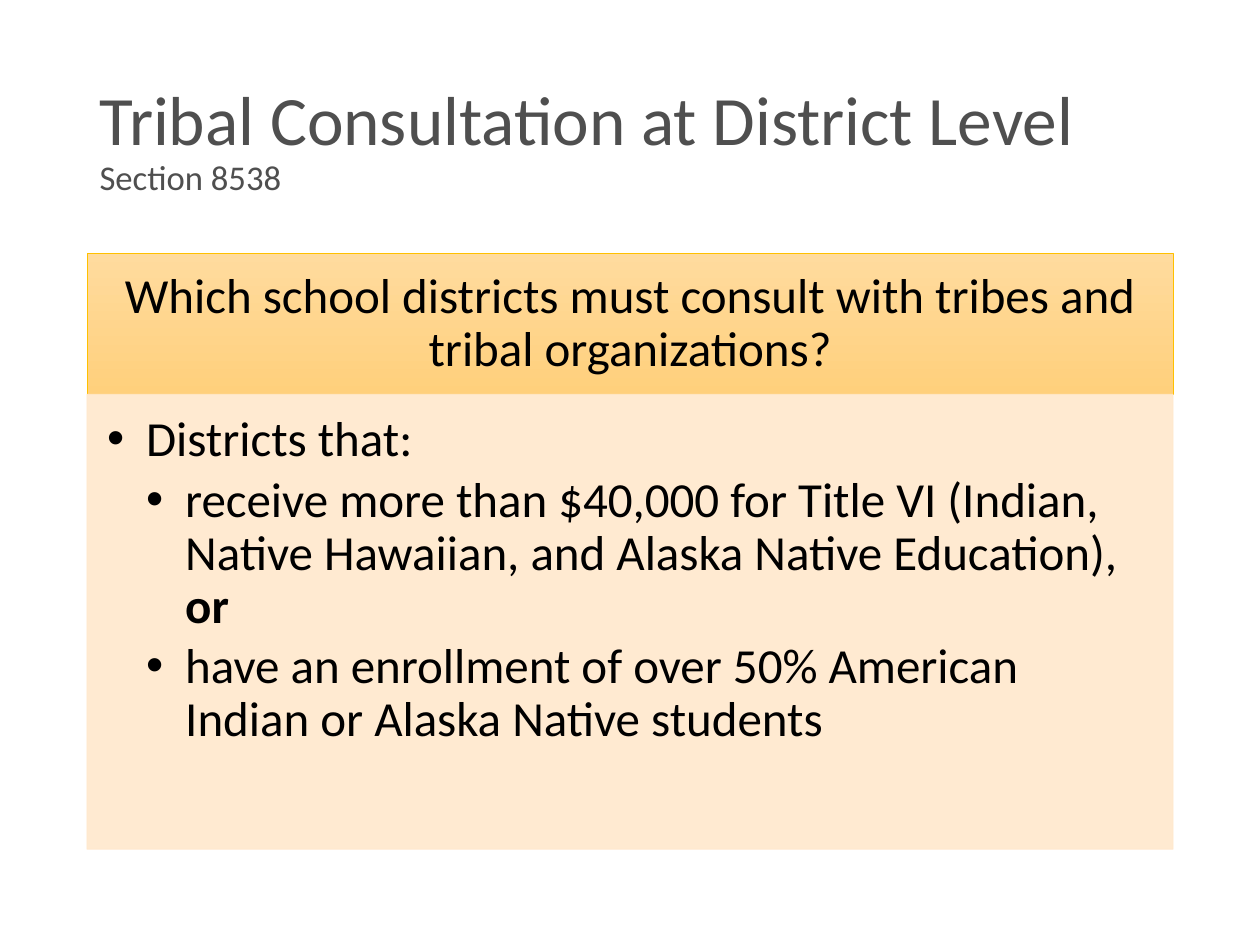
from lxml import etree
from pptx import Presentation
from pptx.dml.color import RGBColor
from pptx.enum import shapes, text
from pptx.oxml.ns import qn
from pptx.util import Inches, Pt


def rgb(value):
    return RGBColor.from_string(value)


def add_panel(top, height, insets, line_color):
    """Add a full-width rectangle that holds black-text paragraphs."""
    sp = s.shapes.add_shape(shapes.MSO_SHAPE.RECTANGLE, LEFT, top, WIDTH, height)
    sp.shadow.inherit = False
    sp.line.color.rgb = rgb(line_color)
    sp.line.width = Pt(0.5)
    tf = sp.text_frame
    tf.word_wrap = True
    tf.margin_left, tf.margin_top, tf.margin_right, tf.margin_bottom = map(Inches, insets)
    return sp


LEFT, WIDTH = Inches(0.69), Inches(8.62)

prs = Presentation()
prs.slide_width, prs.slide_height = Inches(10), Inches(7.5)
s = prs.slides.add_slide(prs.slide_layouts[5])

# Title with a smaller second line
title = s.shapes.title
title.left, title.top, title.width, title.height = LEFT, Inches(0.4), WIDTH, Inches(1.45)
tf = title.text_frame
tf.text = "Tribal Consultation at District Level\vSection 8538"
tf.auto_size = text.MSO_AUTO_SIZE.NONE
tf.vertical_anchor = text.MSO_ANCHOR.MIDDLE
p = tf.paragraphs[0]
p.alignment = text.PP_ALIGN.LEFT
p.line_spacing = 0.9
for r, size in zip(p.runs, (39.6, 19.8)):
    r.font.name = "Calibri"
    r.font.size = Pt(size)
    r.font.color.rgb = rgb("4F4F4F")

# Question header
header = add_panel(Inches(2.01), Inches(1.12), (0.22, 0.12, 0.22, 0.12), "FFC000")
header.fill.gradient()
header.fill.gradient_angle = 270
for stop, color in zip(header.fill.gradient_stops, ("FFDB9E", "FFD07C")):
    stop.color.rgb = rgb(color)
tf = header.text_frame
tf.text = "Which school districts must consult with tribes and tribal organizations?"
tf.vertical_anchor = text.MSO_ANCHOR.MIDDLE
tf.paragraphs[0].alignment = text.PP_ALIGN.CENTER

# Answer panel, slightly transparent
answer = add_panel(Inches(3.13), Inches(3.61), (0.16, 0.16, 0.22, 0.24), "FFE8CC")
answer.fill.solid()
answer.fill.fore_color.rgb = rgb("FFE8CC")
for color in answer._element.spPr.iter(qn("a:srgbClr")):
    etree.SubElement(color, qn("a:alpha"), val="90000")
tf = answer.text_frame
tf.vertical_anchor = text.MSO_ANCHOR.TOP
bullets = [
    (1, "Districts that:", ""),
    (2, "receive more than $40,000 for Title VI (Indian, Native Hawaiian, "
        "and Alaska Native Education), ", "or"),
    (2, "have an enrollment of over 50% American Indian or Alaska Native students", ""),
]
for i, (level, plain, bold) in enumerate(bullets):
    p = tf.paragraphs[0] if i == 0 else tf.add_paragraph()
    p.text = plain
    if bold:
        r = p.add_run()
        r.text = bold
        r.font.bold = True
    p.level = level
    p.alignment = text.PP_ALIGN.LEFT
    p.space_after = Pt(4.2)
    pPr = p._p.get_or_add_pPr()
    pPr.set("marL", str(Inches(0.31 * level)))
    pPr.set("indent", str(Inches(-0.31)))
    etree.SubElement(pPr, qn("a:buFont"), typeface="Arial")
    etree.SubElement(pPr, qn("a:buChar"), char="•")

for sp in (header, answer):
    for p in sp.text_frame.paragraphs:
        p.line_spacing = 0.9
        for r in p.runs:
            r.font.name = "Calibri"
            r.font.size = Pt(28)
            r.font.color.rgb = rgb("000000")

prs.save("out.pptx")
